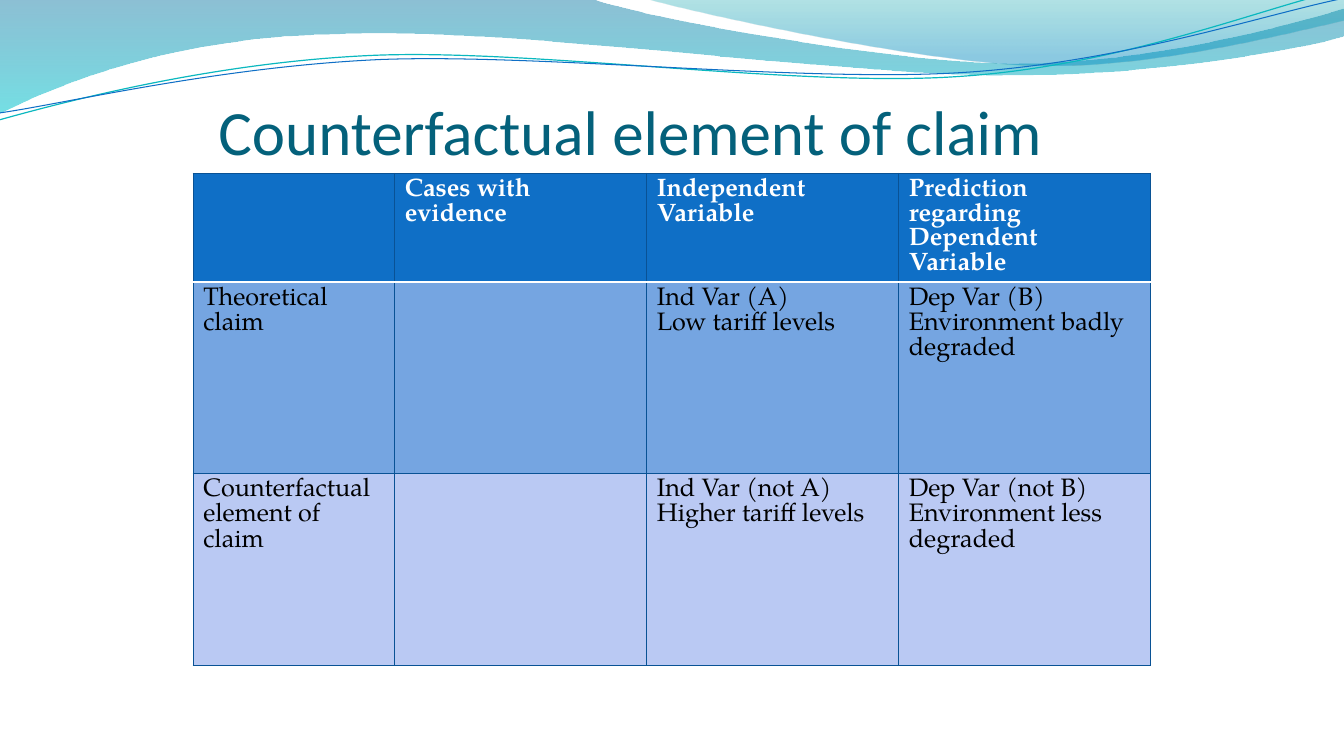
from dataclasses import dataclass

from lxml.etree import SubElement
from pptx import Presentation
from pptx.dml.color import RGBColor as RGB
from pptx.enum.text import MSO_ANCHOR as Anchor, MSO_AUTO_SIZE as AutoSize, PP_ALIGN as Align
from pptx.oxml.ns import qn
from pptx.util import Pt


@dataclass(frozen=True)
class Theme:
    title: str = "04617B"
    header: str = "0F6FC6"
    claim: str = "75A5E1"
    counter: str = "BAC9F3"
    border: str = "095295"
    white: str = "FFFFFF"
    black: str = "000000"
    teal: str = "0AB8BF"
    wave_top: str = "0074A1"
    wave_bottom: str = "00C6CF"
    crest_top: str = "00A1A9"
    crest_bottom: str = "008BBF"
    heading_font: str = "Calibri"
    body_font: str = "TeX Gyre Pagella"
    heading_size: float = 45
    body_size: float = 18


theme = Theme()


def trace(shapes, start, segments, closed):
    """Draw lines (one point) and cubic curves (three points), in points."""
    builder = shapes.build_freeform(Pt(start[0]), Pt(start[1]))
    builder.add_line_segments(
        [(Pt(x), Pt(y)) for segment in segments for x, y in segment], close=closed)
    outline = builder.convert_to_shape()
    outline.shadow.inherit = False
    steps = iter(list(outline._element.iter(qn("a:lnTo"))))
    for segment in segments:
        first, *others = [next(steps) for point in segment]
        if others:
            first.tag = qn("a:cubicBezTo")
        for step in others:
            first.append(step[0])
            step.getparent().remove(step)
    return outline


def add_border(cell, side, color, width):
    line = SubElement(cell._tc.get_or_add_tcPr(), qn(f"a:ln{side}"), w=str(Pt(width)))
    SubElement(SubElement(line, qn("a:solidFill")), qn("a:srgbClr"), val=color)


prs = Presentation()
prs.slide_width, prs.slide_height = Pt(960), Pt(540)
slide = prs.slides.add_slide(prs.slide_layouts[5])

# Translucent waves: start, segments, gradient stops (position, colour, opacity)
waves = [
    ((0, 0), [
        [(422.6, -0.7)],
        [(456.5, 12.2), (637.2, 45.4), (727.9, 45.4)],
        [(819.4, 45.4), (920.2, 18.7), (959.8, 6.5)],
        [(961.2, 25.9)],
        [(943.9, 31.7), (835.2, 54.7), (715.7, 54)],
        [(596.9, 54), (366.5, 20.2), (247, 24.5)],
        [(123.8, 25.9), (43.9, 59.8), (-0.7, 81.4)],
    ], [(0, theme.wave_top, 45), (1, theme.wave_bottom, 55)]),
    ((460.1, -0.7), [
        [(488.9, 7.9), (654.5, 44.6), (738, 46.8)],
        [(821.5, 49.7), (923, 23), (959.8, 15.1)],
        [(959.8, 0)],
    ], [(0, theme.crest_top, 30), (0.8, theme.crest_bottom, 45)]),
]
for start, segments, stops in waves:
    wave = trace(slide.shapes, start, segments, True)
    wave.line.fill.background()
    wave.fill.gradient()
    wave.fill.gradient_angle = 270
    for stop, (position, color, opacity) in zip(wave.fill.gradient_stops, stops):
        stop.position = position
        stop.color.rgb = RGB.from_string(color)
    tints = list(wave._element.spPr.iter(qn("a:srgbClr")))
    for tint, (position, color, opacity) in zip(tints, stops):
        SubElement(tint, qn("a:alpha"), val=str(opacity * 1000))

# Thin ribbons below the waves
ribbons = [
    ((-0.7, 85.7), [
        [(46.1, 72.7), (151.9, 44.6), (265.7, 39.6)],
        [(379.4, 34.6), (568.8, 62.6), (684, 54.7)],
        [(799.2, 47.5), (901.4, 5.8), (958.3, -7.2)],
    ], theme.teal, 0.85),
    ((0, 80.6), [
        [(45.4, 74.2), (157, 47.5), (272.2, 42.5)],
        [(386.6, 38.2), (573.1, 59), (687.6, 51.8)],
        [(802.8, 44.6), (903.6, 10.1), (960.5, -1.4)],
    ], theme.header, 0.75),
]
for start, segments, color, width in ribbons:
    ribbon = trace(slide.shapes, start, segments, False)
    ribbon.fill.background()
    ribbon.line.color.rgb = RGB.from_string(color)
    ribbon.line.width = Pt(width)

# Title, in front of the waves
title = slide.shapes.title
title._element.getparent().append(title._element)
title.left, title.top, title.width, title.height = Pt(156), Pt(30), Pt(648), Pt(90)
heading = title.text_frame
heading.auto_size = AutoSize.NONE
heading.word_wrap = True
heading.vertical_anchor = Anchor.BOTTOM
heading.margin_left = heading.margin_right = heading.margin_bottom = 0
heading.paragraphs[0].alignment = Align.LEFT
run = heading.paragraphs[0].add_run()
run.text = "Counterfactual element of claim"
run.font.name, run.font.size = theme.heading_font, Pt(theme.heading_size)
run.font.color.rgb = RGB.from_string(theme.title)

# Claim table: fill, text colour, row height, line spacing, cells of paragraphs
rows = [
    (theme.header, theme.white, 64.8, 17.6, [
        [], ["Cases with evidence"], ["Independent Variable"],
        ["Prediction regarding Dependent Variable"]]),
    (theme.claim, theme.black, 136.8, 18, [
        ["Theoretical claim"], [], ["Ind Var (A)", "Low tariff levels"],
        ["Dep Var (B)", "Environment badly degraded"]]),
    (theme.counter, theme.black, 136.8, 18, [
        ["Counterfactual element of claim"], [], ["Ind Var (not A)", "Higher tariff levels"],
        ["Dep Var (not B) Environment less degraded"]]),
]
column_widths = [144, 180, 180, 180]
claims_frame = slide.shapes.add_table(
    len(rows), len(column_widths), Pt(138), Pt(123.8), Pt(sum(column_widths)), Pt(367.2))
claims = claims_frame.table
claims.horz_banding = False
for column, width in zip(claims.columns, column_widths):
    column.width = Pt(width)

for r, (fill, ink, height, spacing, texts) in enumerate(rows):
    claims.rows[r].height = Pt(height)
    for c, paragraphs in enumerate(texts):
        cell = claims.cell(r, c)
        for side in "LRTB":
            under_header = (r, side) in ((0, "B"), (1, "T"))
            add_border(cell, side, *((theme.white, 2) if under_header else (theme.border, 0.75)))
        cell.fill.solid()
        cell.fill.fore_color.rgb = RGB.from_string(fill)
        frame = cell.text_frame
        for i, text in enumerate(paragraphs):
            paragraph = frame.add_paragraph() if i else frame.paragraphs[0]
            paragraph.line_spacing = Pt(spacing)
            run = paragraph.add_run()
            run.text = text
            run.font.name, run.font.size = theme.body_font, Pt(theme.body_size)
            run.font.bold = r == 0
            run.font.color.rgb = RGB.from_string(ink)

claims_frame.height = Pt(367.2)
prs.save("out.pptx")
